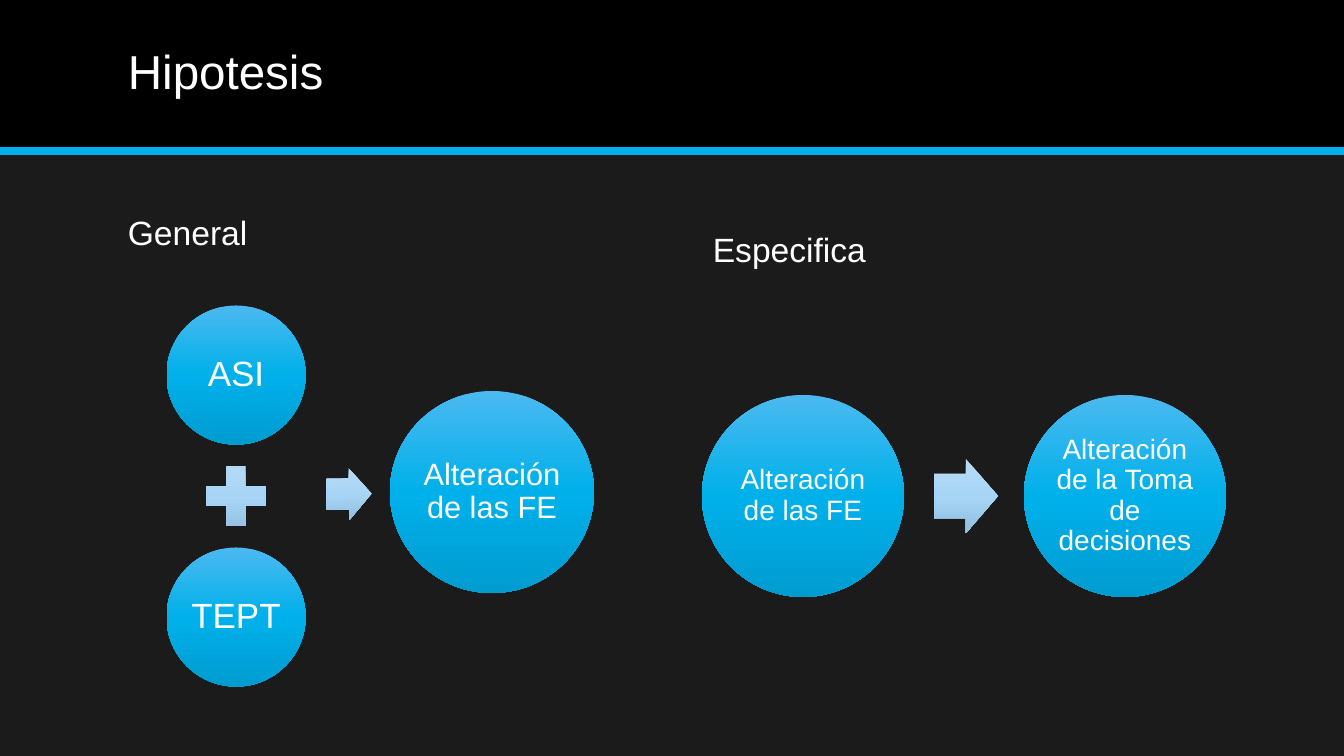
"""Build the hypothesis slide: a general and a specific process diagram."""
from copy import deepcopy

from lxml.etree import SubElement
from pptx import Presentation
from pptx.dml.color import RGBColor
from pptx.enum.shapes import MSO_CONNECTOR, MSO_SHAPE
from pptx.enum.text import MSO_ANCHOR, PP_ALIGN
from pptx.oxml.ns import qn
from pptx.util import Pt

PX = 914400 / 100.8
WIDE, HIGH, BAR = 1344, 756, 151
FONT = "Arial"
COLORS = {"back": "1B1B1B", "bar": "000000", "line": "00B0EA", "text": "FFFFFF"}
BLUE = ("4BB9F0", "00B0EA", "009CD0")
PALE = ("B7DBF5", "A8D5F6", "90BEE0")

LABELS = [
    ("Hipotesis", (118, 14, 1109, 121), 34, MSO_ANCHOR.MIDDLE),
    ("General", (118, 168, 524, 90), 24, MSO_ANCHOR.BOTTOM),
    ("Especifica", (703, 185, 524, 90), 24, MSO_ANCHOR.BOTTOM),
]
CIRCLES = [
    ("ASI", (236, 375), (139, 139), 25),
    ("TEPT", (236, 617), (139, 139), 25),
    ("Alteración de las FE", (492, 492), (204, 202), 22),
    ("Alteración de las FE", (803, 496), (202, 202), 20),
    ("Alteración de la Toma de decisiones", (1125, 496), (202, 202), 20),
]
SIGNS = [
    (MSO_SHAPE.MATH_PLUS, (236, 496), (81, 81), 0),
    (MSO_SHAPE.RIGHT_ARROW, (349, 494), (45, 52), 359),
    (MSO_SHAPE.RIGHT_ARROW, (966, 496), (64, 74), 0),
]


def emu(*vals):
    return [round(v * PX) for v in vals]


def rgb(name):
    return RGBColor.from_string(COLORS[name])


def write(shape, text, size, anchor=MSO_ANCHOR.MIDDLE, align=PP_ALIGN.LEFT, inset=None):
    frame = shape.text_frame
    frame.word_wrap = True
    frame.vertical_anchor = anchor
    if inset is not None:
        pad, = emu(inset)
        frame.margin_left = frame.margin_right = pad
        frame.margin_top = frame.margin_bottom = pad
    para = frame.paragraphs[0]
    para.alignment = align
    para.line_spacing = 0.9
    run = para.add_run()
    run.text = text
    run.font.name = FONT
    run.font.size = Pt(size)
    run.font.color.rgb = rgb("text")


def shade(shape, tones):
    fill = shape.fill
    fill.gradient()
    fill.gradient_angle = 270
    stops = shape.element.find(".//" + qn("a:gsLst"))
    stops.append(deepcopy(stops[-1]))
    for i, (stop, tone) in enumerate(zip(fill.gradient_stops, tones)):
        stop.position = i / 2
        stop.color.rgb = RGBColor.from_string(tone)


def plain(shapes, kind, box):
    shape = shapes.add_shape(kind, *emu(*box))
    shape.shadow.inherit = False
    shape.line.fill.background()
    return shape


def center(mid, size):
    return (mid[0] - size[0] / 2, mid[1] - size[1] / 2, *size)


def main():
    deck = Presentation()
    deck.slide_width, deck.slide_height = emu(WIDE, HIGH)
    slide = deck.slides.add_slide(deck.slide_layouts[6])
    slide.background.fill.solid()
    slide.background.fill.fore_color.rgb = rgb("back")
    shapes = slide.shapes

    bar = plain(shapes, MSO_SHAPE.RECTANGLE, (0, 0, WIDE, BAR))
    bar.fill.solid()
    bar.fill.fore_color.rgb = rgb("bar")
    rule = shapes.add_connector(MSO_CONNECTOR.STRAIGHT, *emu(0, BAR, WIDE, BAR))
    rule.line.color.rgb = rgb("line")
    rule.line.width = Pt(6)
    SubElement(rule.element.spPr, qn("a:effectLst"))

    for text, box, size, anchor in LABELS:
        write(shapes.add_textbox(*emu(*box)), text, size, anchor)
    for text, mid, size, points in CIRCLES:
        circle = plain(shapes, MSO_SHAPE.OVAL, center(mid, size))
        shade(circle, BLUE)
        write(circle, text, points, align=PP_ALIGN.CENTER, inset=3)
    for kind, mid, size, turn in SIGNS:
        sign = plain(shapes, kind, center(mid, size))
        shade(sign, PALE)
        sign.rotation = turn
        if kind == MSO_SHAPE.RIGHT_ARROW:
            sign.adjustments[0] = 0.6

    deck.save("out.pptx")


if __name__ == "__main__":
    main()
